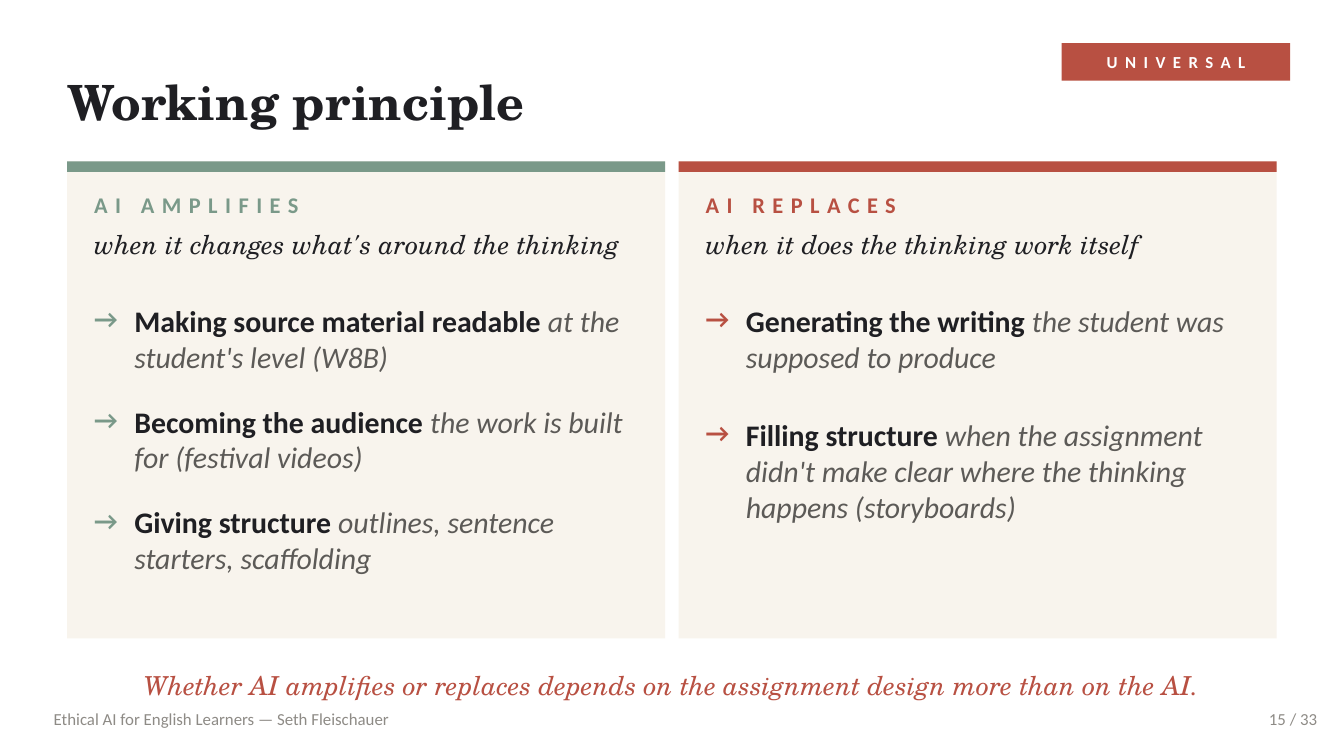
from dataclasses import dataclass

from pptx import Presentation
from pptx import util as u
from pptx.dml.color import RGBColor
from pptx.enum import shapes, text

SERIF = "TeX Gyre Schola"
SANS = "Calibri"
INK = "1F1F23"
GREY = "5C5A57"
PALE = "8E8B86"
RUST = "B85042"
SAGE = "7A9989"
CREAM = "F8F4ED"
WHITE = "FFFFFF"
MID = text.MSO_ANCHOR.MIDDLE
TOP = text.MSO_ANCHOR.TOP
LEFT = text.PP_ALIGN.LEFT
RIGHT = text.PP_ALIGN.RIGHT
CENTER = text.PP_ALIGN.CENTER


@dataclass(frozen=True)
class Box:
    left: float
    top: float
    width: float
    height: float


@dataclass(frozen=True)
class Style:
    size: float
    face: str
    color: str
    bold: bool = False
    slant: bool = False
    space: float = 0


@dataclass(frozen=True)
class Point:
    lead: str
    rest: str


@dataclass(frozen=True)
class Panel:
    left: float
    color: str
    head: str
    when: str
    step: float
    height: float
    points: tuple[Point, ...]


def paint(target, color: str) -> None:
    target.rgb = RGBColor.from_string(color)


def draw_rect(slide, box: Box, color: str) -> None:
    rect = slide.shapes.add_shape(
        shapes.MSO_SHAPE.RECTANGLE,
        u.Pt(box.left), u.Pt(box.top), u.Pt(box.width), u.Pt(box.height),
    )
    rect.shadow.inherit = False
    rect.fill.solid()
    paint(rect.fill.fore_color, color)
    rect.line.fill.background()


def style_run(run, style: Style) -> None:
    font = run.font
    font.size = u.Pt(style.size)
    font.name = style.face
    font.bold = style.bold
    font.italic = style.slant
    paint(font.color, style.color)
    if style.space:
        font._element.set("spc", str(int(style.space * 100)))


def draw_text(slide, box: Box, words: str, style: Style, anchor=TOP, align=LEFT):
    label = slide.shapes.add_textbox(
        u.Pt(box.left), u.Pt(box.top), u.Pt(box.width), u.Pt(box.height)
    )
    frame = label.text_frame
    frame.word_wrap = True
    frame.vertical_anchor = anchor
    frame.margin_left = frame.margin_right = 0
    frame.margin_top = frame.margin_bottom = 0
    frame.text = words
    line = frame.paragraphs[0]
    line.alignment = align
    style_run(line.runs[0], style)
    return line


def draw_point(slide, left: float, top: float, height: float,
               point: Point, color: str) -> None:
    draw_text(slide, Box(left, top, 21.6, 21.6), "→",
              Style(14, SANS, color, bold=True))
    line = draw_text(slide, Box(left + 21.6, top, 277.2, height),
                     point.lead + " ", Style(16, SANS, INK, bold=True))
    rest = line.add_run()
    rest.text = point.rest
    style_run(rest, Style(16, SANS, GREY, slant=True))


def draw_panel(slide, panel: Panel) -> None:
    draw_rect(slide, Box(panel.left, 86.4, 320.4, 255.6), CREAM)
    draw_rect(slide, Box(panel.left, 86.4, 320.4, 5.76), panel.color)
    inner = panel.left + 14.4
    draw_text(slide, Box(inner, 97.2, 295.2, 25.2), panel.head,
              Style(12, SANS, panel.color, bold=True, space=4), MID)
    draw_text(slide, Box(inner, 122.4, 295.2, 28.8), panel.when,
              Style(14, SERIF, INK, slant=True))
    for row, point in enumerate(panel.points):
        draw_point(slide, inner, 162 + row * panel.step, panel.height,
                   point, panel.color)


PANELS = (
    Panel(36, SAGE, "AI AMPLIFIES", "when it changes what's around the thinking", 54, 46.8, (
        Point("Making source material readable", "at the student's level (W8B)"),
        Point("Becoming the audience", "the work is built for (festival videos)"),
        Point("Giving structure", "outlines, sentence starters, scaffolding"),
    )),
    Panel(363.6, RUST, "AI REPLACES", "when it does the thinking work itself", 61.2, 57.6, (
        Point("Generating the writing", "the student was supposed to produce"),
        Point("Filling structure", "when the assignment didn't make clear "
              "where the thinking happens (storyboards)"),
    )),
)


def main() -> None:
    deck = Presentation()
    deck.slide_width = u.Pt(720)
    deck.slide_height = u.Pt(405)
    slide = deck.slides.add_slide(deck.slide_layouts[6])
    slide.background.fill.solid()
    paint(slide.background.fill.fore_color, WHITE)

    draw_text(slide, Box(36, 28.8, 482.4, 50.4), "Working principle",
              Style(26, SERIF, INK, bold=True), MID)
    badge = Box(568.8, 23.04, 122.4, 20.16)
    draw_rect(slide, badge, RUST)
    draw_text(slide, badge, "UNIVERSAL",
              Style(9, SANS, WHITE, bold=True, space=4), MID, CENTER)

    for panel in PANELS:
        draw_panel(slide, panel)

    draw_text(slide, Box(36, 352.8, 648, 28.8),
              "Whether AI amplifies or replaces depends on the assignment "
              "design more than on the AI.",
              Style(14, SERIF, RUST, slant=True), MID, CENTER)
    small = Style(9, SANS, PALE)
    draw_text(slide, Box(648, 374.4, 57.6, 21.6), "15 / 33", small, MID, RIGHT)
    draw_text(slide, Box(28.8, 374.4, 504, 21.6),
              "Ethical AI for English Learners — Seth Fleischauer", small, MID)
    deck.save("out.pptx")


if __name__ == "__main__":
    main()
